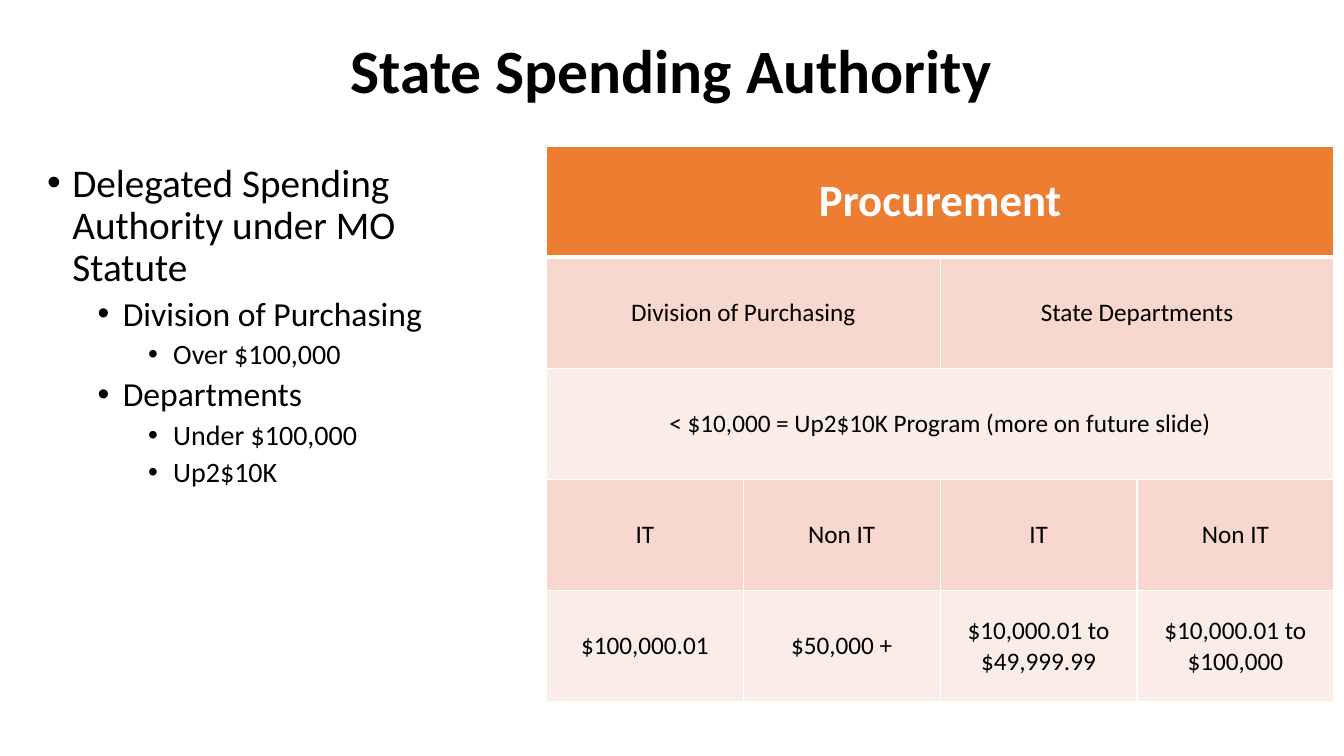
from lxml import etree
from pptx import Presentation
from pptx.dml.color import RGBColor
from pptx.enum.text import MSO_ANCHOR, PP_ALIGN
from pptx.oxml.ns import qn
from pptx.util import Pt

MIDDLE, TOP = MSO_ANCHOR.MIDDLE, MSO_ANCHOR.TOP
CENTER, LEFT = PP_ALIGN.CENTER, PP_ALIGN.LEFT
PX = 9144  # 100 px to the inch
FONT = "Calibri"
BLACK, WHITE = "000000", "FFFFFF"
ORANGE, ROSE, BLUSH = "ED7D31", "F8D7CE", "FCECE8"

# Outline: level and text
POINTS = [
    (0, "Delegated Spending Authority under MO Statute"),
    (1, "Division of Purchasing"),
    (2, "Over $100,000"),
    (1, "Departments"),
    (2, "Under $100,000"),
    (2, "Up2$10K"),
]
SIZES = [28, 24, 20]

# Table rows: each row's cells share the four columns evenly
COLS = 4
ROWS = [
    ["Procurement"],
    ["Division of Purchasing", "State Departments"],
    ["< $10,000 = Up2$10K Program (more on future slide)"],
    ["IT", "Non IT", "IT", "Non IT"],
    ["$100,000.01", "$50,000 +", "$10,000.01 to $49,999.99",
     "$10,000.01 to $100,000"],
]


def px(n):
    return n * PX


def paint(color):
    return RGBColor.from_string(color)


def write(para, text, size=18, color=BLACK, bold=False, align=LEFT,
          lead=None, gap=None):
    para.alignment = align
    if lead:
        para.line_spacing = lead
    if gap:
        para.space_before = Pt(gap)
    run = para.add_run()
    run.text = text
    font = run.font
    font.name, font.size, font.bold = FONT, Pt(size), bold
    font.color.rgb = paint(color)


def add_box(slide, left, top, width, height, anchor=TOP):
    box = slide.shapes.add_textbox(px(left), px(top), px(width), px(height))
    frame = box.text_frame
    frame.word_wrap = True
    frame.vertical_anchor = anchor
    return frame


def add_dot(para, level):
    para.level = level
    props = para._p.get_or_add_pPr()
    props.set("marL", str(px(25 + 50 * level)))
    props.set("indent", str(px(-25)))
    etree.SubElement(props, qn("a:buFont"), typeface="Arial")
    etree.SubElement(props, qn("a:buChar"), char="•")


def add_list(frame, points):
    for i, (level, text) in enumerate(points):
        para = frame.add_paragraph() if i else frame.paragraphs[0]
        add_dot(para, level)
        write(para, text, size=SIZES[level], lead=0.9, gap=5 if i else None)


def set_edges(cell, **widths):
    props = cell._tc.get_or_add_tcPr()
    for side in "LRTB":
        width = Pt(widths.get(side, 1))
        line = etree.SubElement(props, qn(f"a:ln{side}"), w=str(width))
        fill = etree.SubElement(line, qn("a:solidFill"))
        etree.SubElement(fill, qn("a:srgbClr"), val=WHITE)


def add_grid(slide, left, top, width, height):
    table = slide.shapes.add_table(len(ROWS), COLS, px(left), px(top),
                                   px(width), px(height)).table
    for r, texts in enumerate(ROWS):
        head = r == 0
        color = ORANGE if head else (ROSE if r % 2 else BLUSH)
        # Fills and borders
        for c in range(COLS):
            cell = table.cell(r, c)
            set_edges(cell, T=3 if r == 1 else 1, B=3 if head else 1)
            cell.fill.solid()
            cell.fill.fore_color.rgb = paint(color)
        # Merged cells and text
        span = COLS // len(texts)
        for i, text in enumerate(texts):
            cell = table.cell(r, i * span)
            if span > 1:
                cell.merge(table.cell(r, (i + 1) * span - 1))
            cell.vertical_anchor = MIDDLE
            write(cell.text_frame.paragraphs[0], text, align=CENTER,
                  size=32 if head else 18, bold=head,
                  color=WHITE if head else BLACK)


def main():
    deck = Presentation()
    deck.slide_width, deck.slide_height = px(1333), px(750)
    slide = deck.slides.add_slide(deck.slide_layouts[6])

    # Title
    title = add_box(slide, 276, 0, 780, 145, anchor=MIDDLE)
    write(title.paragraphs[0], "State Spending Authority", size=44,
          bold=True, align=CENTER, lead=0.9)

    # Outline on the left, table on the right
    add_list(add_box(slide, 37, 157, 456, 528), POINTS)
    add_grid(slide, 542, 145, 781, 551)

    deck.save("out.pptx")


if __name__ == "__main__":
    main()
